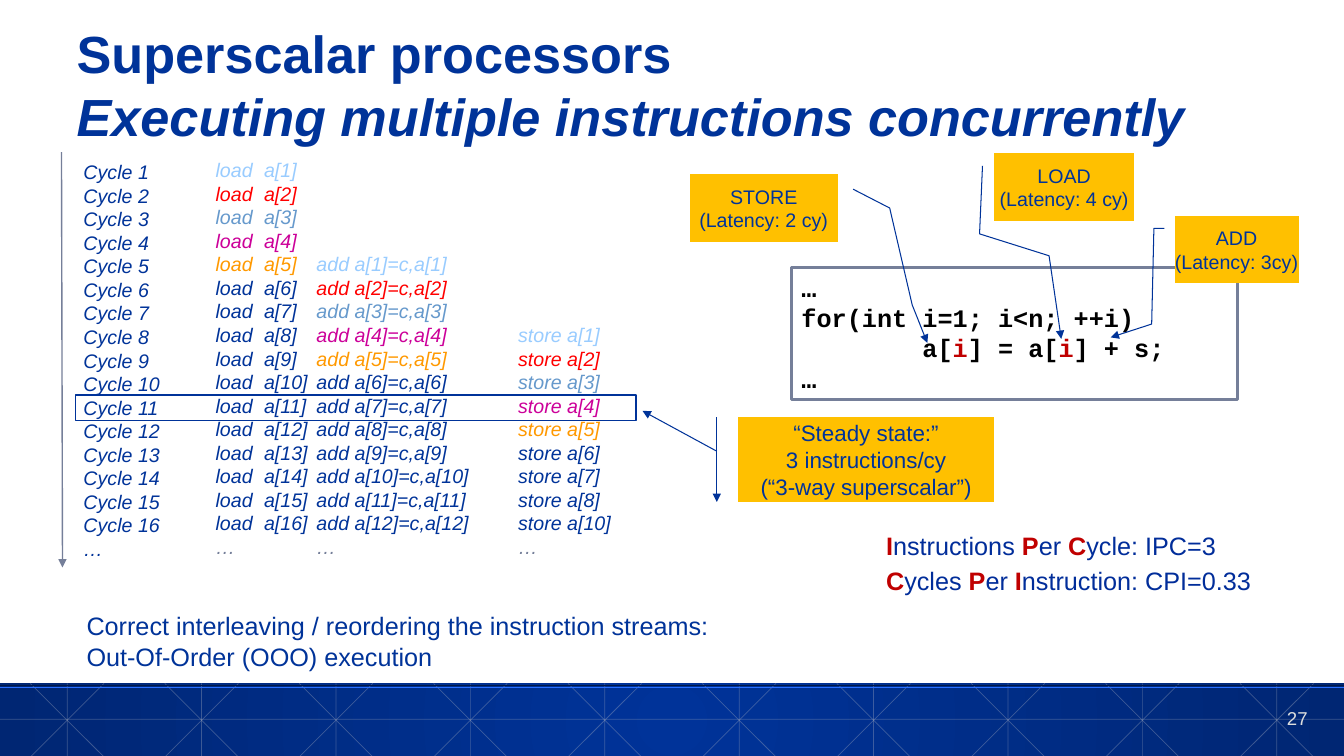
from lxml.etree import SubElement
from pptx import Presentation
from pptx.dml.color import RGBColor
from pptx.enum.shapes import MSO_CONNECTOR as Connector, MSO_SHAPE as Shape
from pptx.enum.text import MSO_ANCHOR as Anchor, PP_ALIGN as Align
from pptx.oxml.ns import qn
from pptx.util import Inches, Pt

COLORS = {
    "blue": "003399", "navy": "002673", "edge": "00194C", "bright": "2970FF",
    "lattice": "ACB2C2", "number": "DDDEDD", "gray": "757F99", "amber": "FFC000",
    "black": "000000", "accent": "C00000", "ipc": "012D9A", "sky": "99CCFF",
    "red": "FF0000", "steel": "6699CC", "magenta": "CC0099", "orange": "FF9900",
}
STREAM_COLORS = ["sky", "red", "steel", "magenta", "orange"]
CYCLES = 16
ADD_START, STORE_START = 5, 8
STORE_INDICES = [*range(1, 9), 10]


def color(name):
    """Return the named colour."""
    return RGBColor.from_string(COLORS[name])


def add_arrowhead(line_format):
    """Put a triangle at the far end of a line."""
    line = line_format._get_or_add_ln()
    SubElement(line, qn("a:tailEnd"), type="triangle")


def add_line(slide, start, end, name, width, alpha=None, arrow=False):
    """Draw a straight line between two points given in inches."""
    line = slide.shapes.add_connector(
        Connector.STRAIGHT, *(Inches(value) for value in (*start, *end)))
    line.line.color.rgb = color(name)
    line.line.width = Pt(width)
    if alpha:
        fill = line.line._get_or_add_ln().find(".//" + qn("a:srgbClr"))
        SubElement(fill, qn("a:alpha"), val=str(alpha * 1000))
    if arrow:
        add_arrowhead(line.line)
    SubElement(line._element.spPr, qn("a:effectLst"))


def add_box(slide, box, kind=Shape.RECTANGLE, fill=None, line=None, width=1):
    """Draw a preset shape without shadow."""
    shape = slide.shapes.add_shape(kind, *(Inches(value) for value in box))
    shape.shadow.inherit = False
    if fill:
        shape.fill.solid()
        shape.fill.fore_color.rgb = color(fill)
    else:
        shape.fill.background()
    if line:
        shape.line.color.rgb = color(line)
        shape.line.width = Pt(width)
    else:
        shape.line.fill.background()
    return shape


def add_text_box(slide, box):
    """Add an empty text box."""
    return slide.shapes.add_textbox(*(Inches(value) for value in box))


def write(shape, lines, size, font="Arial", align=Align.LEFT, anchor=Anchor.TOP,
          wrap=True, inset=True, bold=None, italic=None, indent=0, gap=0, tabs=()):
    """Fill a shape with lines, each a list of (text, colour, run style) runs."""
    frame = shape.text_frame
    frame.word_wrap = wrap
    frame.vertical_anchor = anchor
    if not inset:
        frame.margin_left = frame.margin_right = 0
        frame.margin_top = frame.margin_bottom = 0
    for index, runs in enumerate(lines):
        paragraph = frame.add_paragraph() if index else frame.paragraphs[0]
        properties = paragraph._p.get_or_add_pPr()
        if indent:
            properties.set("marL", str(Inches(indent)))
            properties.set("indent", "0")
        if tabs:
            stops = SubElement(properties, qn("a:tabLst"))
            for position in tabs:
                SubElement(stops, qn("a:tab"), pos=str(Inches(position)), algn="l")
        paragraph.alignment = align
        if index and gap:
            paragraph.space_before = Pt(gap)
        paragraph.font.name = font
        paragraph.font.size = Pt(size)
        paragraph.font.bold = bold
        paragraph.font.italic = italic
        for text, name, *style in runs:
            run = paragraph.add_run()
            run.text = text
            run.font.color.rgb = color(name)
            if "bold" in style:
                run.font.bold = True
            if "italic" in style:
                run.font.italic = True


def add_footer(slide, box):
    """Draw the gradient band with its lattice and the slide number."""
    left, top, width, height = box
    bottom, half = top + height, height / 2
    band = add_box(slide, box)
    band.fill.gradient()
    for stop, name in zip(band.fill.gradient_stops, ("blue", "navy")):
        stop.color.rgb = color(name)
    gradient = band._element.spPr.find(qn("a:gradFill"))
    gradient.remove(gradient.find(qn("a:lin")))
    path = SubElement(gradient, qn("a:path"), path="circle")
    SubElement(path, qn("a:fillToRect"), l="50000", t="50000", r="50000", b="50000")
    columns = 10
    for column in range(columns):
        center = left + width * (column + 0.5) / columns
        for offset_top, offset_bottom in ((0, 0), (-half, half), (half, -half)):
            add_line(slide, (center + offset_top, top), (center + offset_bottom, bottom),
                     "lattice", 0.5, alpha=35)
    for offset, name, weight, alpha in ((half - 0.01, "lattice", 0.5, 35),
                                        (0.02, "edge", 1.25, None),
                                        (0.04, "bright", 1, None)):
        add_line(slide, (left, top + offset), (left + width, top + offset),
                 name, weight, alpha)
    number = add_text_box(slide, (left + 12.6, top + 0.23, 0.37, 0.22))
    write(number, [[("27", "number")]], 13.3, align=Align.RIGHT,
          anchor=Anchor.BOTTOM, wrap=False, inset=False)


def add_title(slide, box):
    """Write the two title lines."""
    write(add_text_box(slide, box),
          [[("Superscalar processors", "blue")],
           [("Executing multiple instructions concurrently", "blue", "italic")]],
          37.3, bold=True, inset=False)


def instruction(text, index):
    """Return a run in the colour of its loop iteration."""
    name = STREAM_COLORS[index - 1] if index <= len(STREAM_COLORS) else "blue"
    return text, name


def pipeline_row(cycle):
    """Return the runs of all instructions issued in one cycle."""
    runs = [instruction(f"load\ta[{cycle}]", cycle)]
    if cycle >= ADD_START:
        index = cycle - ADD_START + 1
        runs.append(instruction(f"\tadd a[{index}]=c,a[{index}]", index))
    if cycle >= STORE_START:
        index = STORE_INDICES[cycle - STORE_START]
        runs.append(instruction(f"\tstore a[{index}]", index))
    return runs


def add_pipeline(slide, box):
    """Write the cycles and instruction streams beside a time arrow."""
    left, top, width, height = box
    cycles = range(1, CYCLES + 1)
    add_line(slide, (left, top), (left + 0.01, top + height), "gray", 1, arrow=True)
    labels = [[(f"Cycle {cycle}", "blue")] for cycle in cycles] + [[("…", "blue")]]
    write(add_text_box(slide, (left + 0.12, top + 0.03, 1.1, 4.34)), labels, 14,
          italic=True, wrap=False)
    rows = [pipeline_row(cycle) for cycle in cycles] + [[("…\t\t…\t…", "gray")]]
    write(add_text_box(slide, (left + 1.43, top + 0.01, 4.32, height)), rows, 14,
          italic=True, tabs=(0.48, 1, 3))
    add_box(slide, (left + 0.14, top + 2.41, width, 0.25), line="blue")


def add_callout(slide, box, kind, adjustments, lines, size):
    """Draw an amber callout with an arrow leader."""
    callout = add_box(slide, box, kind, "amber", "blue", 0.75)
    for index, value in enumerate(adjustments):
        callout.adjustments[index] = value
    add_arrowhead(callout.line)
    write(callout, [[(line, "blue")] for line in lines], size,
          align=Align.CENTER, anchor=Anchor.MIDDLE, wrap=False)


def add_code(slide, box):
    """Show the loop with the latency callouts around it."""
    left, top = box[:2]
    code = add_box(slide, box, line="gray", width=2)
    write(code, [[("…", "black")],
                 [("for(int i=1; i<n; ++i)", "black")],
                 [("        a[", "black"), ("i", "accent"), ("] = a[", "black"),
                  ("i", "accent"), ("] + s;", "black")],
                 [("…", "black")]], 18, font="Courier New", bold=True)
    callouts = [
        ("LOAD", "4 cy", 2.01, -1.13, 1.39,
         (0.188, -0.083, 1.195, -0.104, 1.519, 0.392, 2.75, 0.479)),
        ("ADD", "3cy", 3.8, -0.51, 1.23,
         (0.188, -0.083, 0.188, -0.167, 1.605, -0.185, 1.802, -0.516)),
        ("STORE", "2 cy", -1.01, -0.92, 1.47,
         (0.22, 1.103, 0.499, 1.35, 1.935, 1.502, 2.496, 1.604)),
    ]
    for name, latency, across, down, width, adjustments in callouts:
        add_callout(slide, (left + across, top + down, width, 0.67),
                    Shape.LINE_CALLOUT_3_NO_BORDER, adjustments,
                    [name, f"(Latency: {latency})"], 14)


def add_summary(slide, box):
    """Define the two throughput measures with highlighted initials."""
    measures = [("Instructions ", "Per ", "Cycle: IPC=3"),
                ("Cycles ", "Per ", "Instruction: CPI=0.33")]
    lines = [[run for word in words
              for run in ((word[0], "accent", "bold"), (word[1:], "ipc"))]
             for words in measures]
    write(add_text_box(slide, box), lines, 18, indent=0.49, gap=3.6)


def add_conclusion(slide, box):
    """Write the closing remark."""
    lines = ["Correct interleaving / reordering the instruction streams:",
             "Out-Of-Order (OOO) execution"]
    write(add_text_box(slide, box), [[(line, "blue")] for line in lines], 18)


def main():
    """Build and save the slide."""
    presentation = Presentation()
    presentation.slide_width, presentation.slide_height = Inches(13.33), Inches(7.5)
    slide = presentation.slides.add_slide(presentation.slide_layouts[6])
    add_footer(slide, (0, 6.78, 13.33, 0.73))
    add_title(slide, (0.76, 0.21, 11.81, 1.31))
    add_code(slide, (7.85, 2.65, 4.42, 1.31))
    add_pipeline(slide, (0.61, 1.51, 5.56, 4.12))
    add_callout(slide, (7.32, 4.14, 2.54, 0.84), Shape.LINE_CALLOUT_1_ACCENT_BAR,
                (0.401, -0.083, -0.076, -0.373),
                ["“Steady state:”", "3 instructions/cy", "(“3-way superscalar”)"], 16)
    add_conclusion(slide, (0.76, 6.01, 9.31, 0.71))
    add_summary(slide, (8.2, 5.21, 4.37, 0.81))
    presentation.save("out.pptx")


if __name__ == "__main__":
    main()
